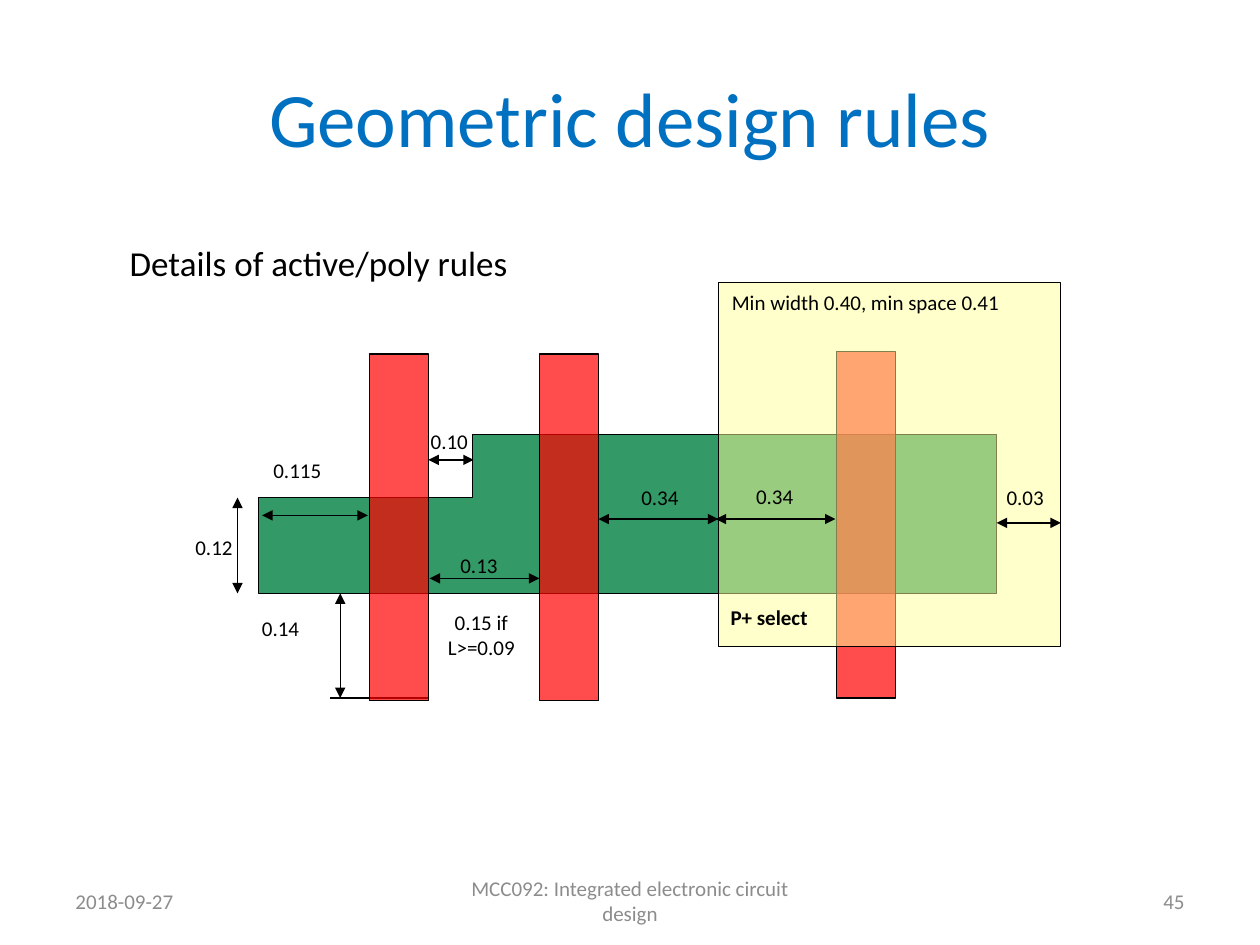
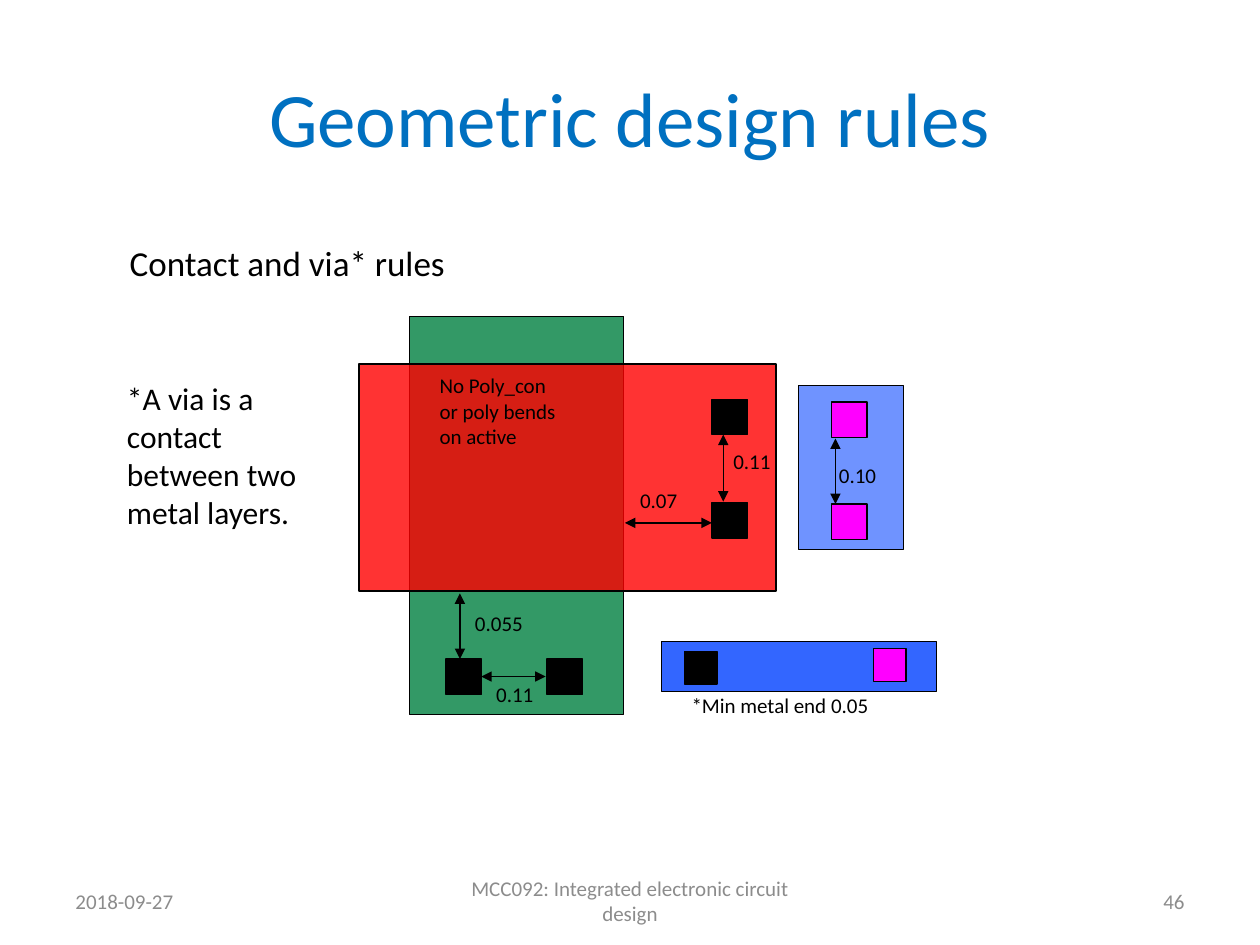
"""Builds two slides on geometric design rules for integrated circuits."""
from dataclasses import dataclass

from lxml import etree
from pptx import Presentation
from pptx.dml.color import RGBColor
from pptx.enum.shapes import MSO_CONNECTOR, MSO_SHAPE
from pptx.enum.text import MSO_ANCHOR, PP_ALIGN
from pptx.oxml.ns import qn
from pptx.util import Pt

RECTANGLE = MSO_SHAPE.RECTANGLE
STRAIGHT = MSO_CONNECTOR.STRAIGHT
LEFT, CENTER, RIGHT = PP_ALIGN.LEFT, PP_ALIGN.CENTER, PP_ALIGN.RIGHT
TOP, MIDDLE = MSO_ANCHOR.TOP, MSO_ANCHOR.MIDDLE
TITLE_ONLY = 5
TIGHT = 1.44


@dataclass(frozen=True)
class Theme:
    font: str = "Calibri"
    title: str = "0070C0"
    ink: str = "000000"
    muted: str = "8C8C8C"
    active: str = "339966"
    poly: str = "FF0000"
    select: str = "FFFF99"
    metal: str = "3366FF"
    contact: str = "000000"
    via: str = "FF00FF"
    title_size: float = 44
    heading_size: float = 20
    note_size: float = 18
    label_size: float = 12
    line_width: float = 0.75


class DeckBuilder:
    def __init__(self, theme):
        self.theme = theme
        self.deck = Presentation()
        self.deck.slide_width, self.deck.slide_height = Pt(720), Pt(540)
        self.page = None

    def start_page(self, title, heading, number):
        self.page = self.deck.slides.add_slide(self.deck.slide_layouts[TITLE_ONLY])
        box = self.page.shapes.title
        box.left, box.top, box.width, box.height = Pt(36), Pt(21.6), Pt(648), Pt(90)
        box.text_frame.vertical_anchor = MIDDLE
        self.add_lines(box.text_frame, [title], self.theme.title_size, self.theme.title, CENTER)
        for text, left, width, align in (
            ("2018-09-27", 36, 168, LEFT),
            ("MCC092: Integrated electronic circuit design", 246, 228, CENTER),
            (str(number), 516, 168, RIGHT),
        ):
            self.text([text], left, 500.4, width, 28.8,
                      color=self.theme.muted, align=align, anchor=MIDDLE)
        self.text([heading], 67, 134.6, 268, 28.8, size=self.theme.heading_size)

    def add_lines(self, frame, lines, size, color, align, bold=False):
        for index, line in enumerate(lines):
            para = frame.add_paragraph() if index else frame.paragraphs[0]
            para.alignment = align
            span = para.add_run()
            span.text = line
            span.font.name = self.theme.font
            span.font.size = Pt(size)
            span.font.bold = bold
            span.font.color.rgb = RGBColor.from_string(color)

    def text(self, lines, left, top, width, height, inset=7.2, size=None,
             color=None, align=LEFT, anchor=TOP, bold=False):
        box = self.page.shapes.add_textbox(Pt(left), Pt(top), Pt(width), Pt(height))
        frame = box.text_frame
        frame.word_wrap = True
        frame.vertical_anchor = anchor
        frame.margin_left = frame.margin_right = Pt(inset)
        self.add_lines(frame, lines, size or self.theme.label_size,
                       color or self.theme.ink, align, bold)

    def paint(self, shape, color, opacity=100):
        shape.shadow.inherit = False
        shape.fill.solid()
        shape.fill.fore_color.rgb = RGBColor.from_string(color)
        shape.line.color.rgb = RGBColor.from_string(self.theme.ink)
        shape.line.width = Pt(self.theme.line_width)
        if opacity < 100:
            tint = shape._element.spPr.find(qn("a:solidFill"))[0]
            etree.SubElement(tint, qn("a:alpha")).set("val", str(opacity * 1000))

    def layer(self, color, left, top, width, height, opacity=100):
        shape = self.page.shapes.add_shape(RECTANGLE, Pt(left), Pt(top), Pt(width), Pt(height))
        self.paint(shape, color, opacity)

    def outline(self, color, points):
        corners = [(Pt(x), Pt(y)) for x, y in points]
        builder = self.page.shapes.build_freeform(*corners[0])
        builder.add_line_segments(corners[1:], close=True)
        self.paint(builder.convert_to_shape(), color)

    def line(self, x1, y1, x2, y2, arrows=True):
        connector = self.page.shapes.add_connector(STRAIGHT, Pt(x1), Pt(y1), Pt(x2), Pt(y2))
        connector.line.color.rgb = RGBColor.from_string(self.theme.ink)
        connector.line.width = Pt(self.theme.line_width)
        if arrows:
            stroke = connector._element.spPr.find(qn("a:ln"))
            for end in ("a:headEnd", "a:tailEnd"):
                etree.SubElement(stroke, qn(end)).set("type", "triangle")
        etree.SubElement(connector._element.spPr, qn("a:effectLst"))

    def dimensions(self, arrows, labels):
        for arrow in arrows:
            self.line(*arrow)
        for text, *place in labels:
            self.text([text], *place)


def active_poly_page(builder):
    theme = builder.theme
    builder.start_page("Geometric design rules", "Details of active/poly rules", 45)
    active_top, active_bottom, gate_end = 284.4, 339.1, 398.9
    builder.outline(theme.active, [
        (147.6, active_top), (270, active_top), (270, 248.4),
        (569.5, 248.4), (569.5, active_bottom), (147.6, active_bottom),
    ])
    builder.line(244.8, gate_end, 188.6, gate_end, arrows=False)
    for left, top in ((211, 202.3), (308.2, 202.3), (478.1, 200.9)):
        builder.layer(theme.poly, left, top, 33.8, 198, 70)
    builder.layer(theme.select, 410.4, 161.3, 195.8, 208.1, 50)
    builder.dimensions(
        arrows=[
            (194.4, active_bottom, 194.4, gate_end),
            (149.8, 294.5, 210.2, 294.5),
            (244.8, 262.8, 270.7, 262.8),
            (342, 296.6, 410.4, 296.6),
            (409, 296.6, 477.4, 296.6),
            (135.7, active_top, 135.7, active_bottom),
            (245.5, 330.5, 308.2, 330.5),
            (569.5, 298.8, 606.2, 298.8),
        ],
        labels=[
            ("0.14", 142.6, 348.5, 64.8, 40.3),
            ("0.10", 239, 241.2, 66.2, 40.3),
            ("0.115", 154.8, 257.8, 57.6, 24.5, TIGHT),
            ("0.34", 365, 273.6, 51.8, 40.3, TIGHT),
            ("0.34", 430.6, 272.9, 48.2, 40.3, TIGHT),
            ("0.03", 568.1, 273.6, 39.6, 21.6),
            ("0.12", 110.2, 301.7, 64.8, 40.3, TIGHT),
            ("0.13", 256, 312.5, 79.6, 36),
            ("Min width 0.40, min space 0.41", 411.1, 162, 195.1, 28.8),
        ],
    )
    builder.text(["0.15 if", "L>=0.09"], 245, 344.9, 60, 29.5, align=CENTER)
    builder.text(["P+ select"], 410.4, 342, 195.1, 28.8, bold=True)


def contact_via_page(builder):
    theme = builder.theme
    builder.start_page("Geometric design rules", "Contact and via* rules", 46)
    builder.layer(theme.metal, 378, 366.5, 157, 28.8)
    builder.layer(theme.active, 234, 180.7, 122.4, 227.5)
    builder.layer(theme.poly, 205.2, 208.1, 238.3, 129.6, 80)
    builder.layer(theme.metal, 456.5, 220.3, 59.8, 93.6, 70)
    for color, size, left, top in (
        (theme.contact, 20.2, 254.9, 376.6),
        (theme.contact, 20.2, 312.5, 376.6),
        (theme.contact, 20.2, 406.8, 287.3),
        (theme.contact, 20.2, 406.8, 228.2),
        (theme.via, 20.2, 475.2, 288),
        (theme.via, 20.2, 475.2, 229.7),
        (theme.contact, 18.7, 391, 372.2),
        (theme.via, 18.7, 499, 370.8),
    ):
        builder.layer(color, left, top, size, size)
    builder.dimensions(
        arrows=[
            (262.8, 339.1, 262.8, 376.6),
            (357.1, 298.8, 406.8, 298.8),
            (477.4, 250.6, 477.4, 288),
            (275, 386.6, 311.8, 386.6),
            (413.3, 248.4, 413.3, 286.6),
        ],
        labels=[
            ("0.11", 276.5, 385.9, 60.5, 34.6),
            ("0.055", 270, 345.6, 50.4, 34.6, TIGHT),
            ("0.07", 364.3, 275, 41.8, 34.6, TIGHT),
            ("0.11", 417.6, 252.7, 38.9, 34.6, TIGHT),
            ("0.10", 472.3, 260.6, 58.3, 34.6),
            ("*Min metal end 0.05", 388.1, 392.4, 146.2, 24.5),
        ],
    )
    builder.text(["No Poly_con", "or poly bends", "on active"], 244.1, 209.5, 113, 115.9)
    builder.text(["*A via is a", "contact", "between two", "metal layers."],
                 65.5, 213.1, 122, 116.6, size=theme.note_size)


def main():
    builder = DeckBuilder(Theme())
    active_poly_page(builder)
    contact_via_page(builder)
    builder.deck.save("out.pptx")


if __name__ == "__main__":
    main()
